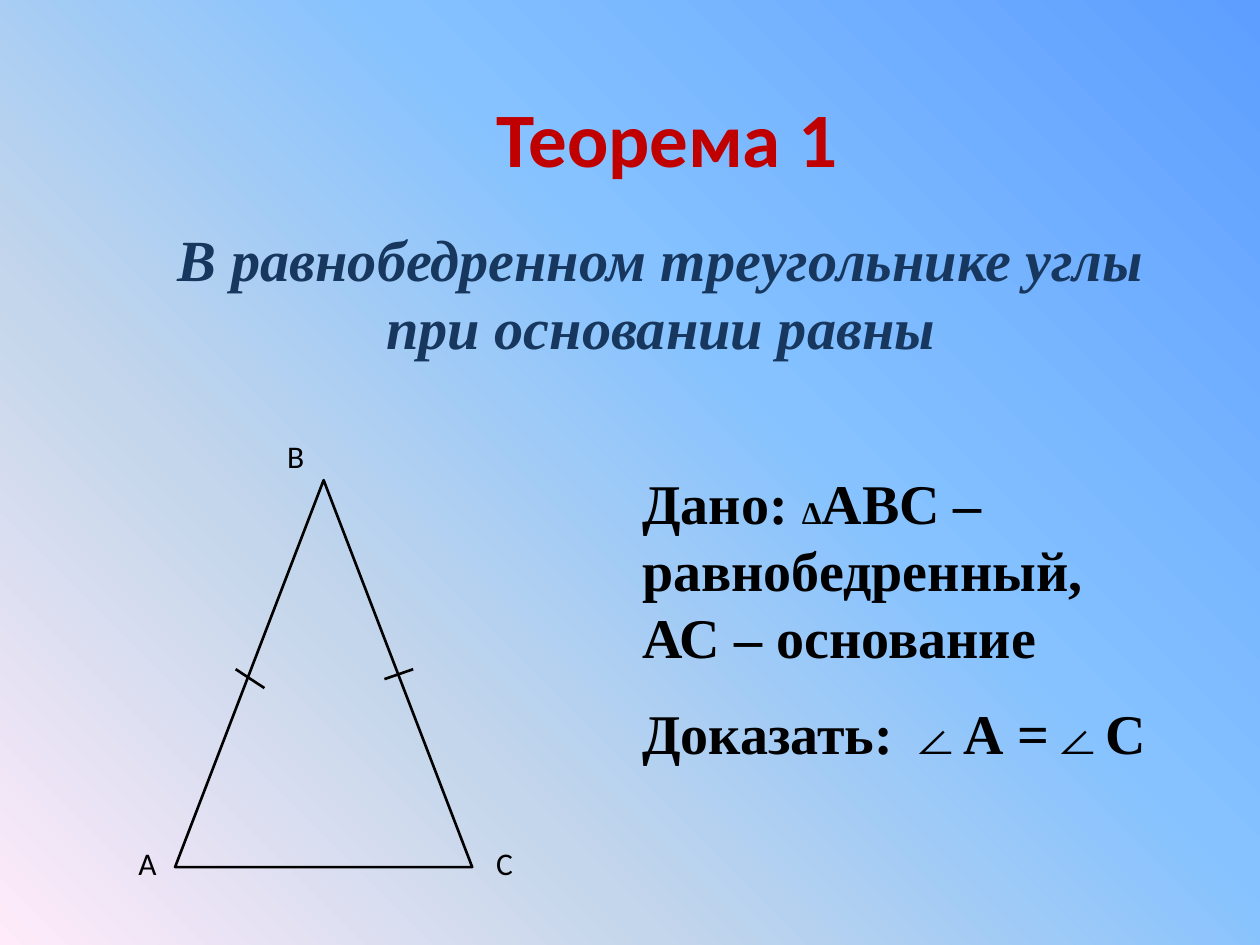
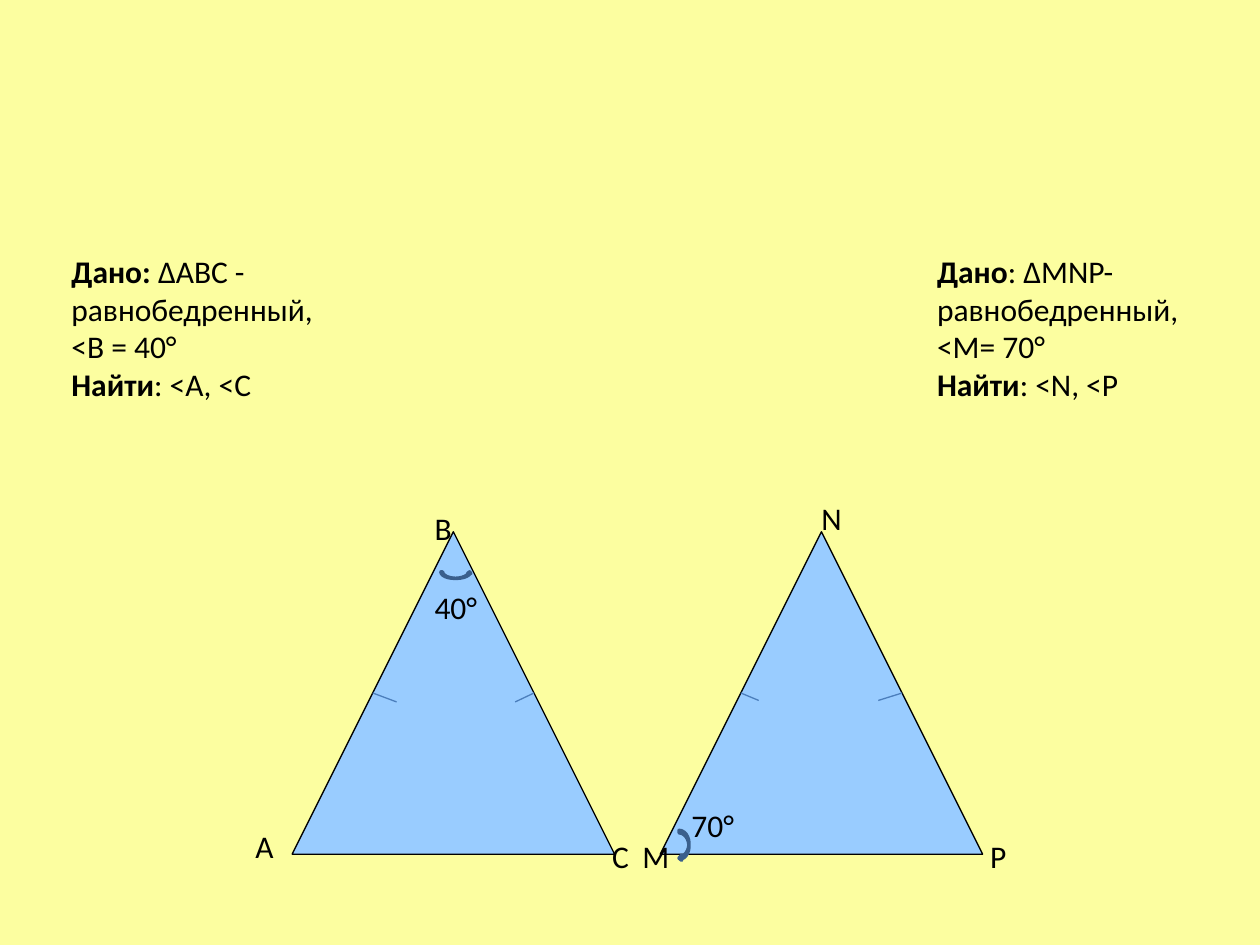
from dataclasses import dataclass

from lxml import etree
from pptx import Presentation
from pptx.dml.color import RGBColor
from pptx.enum.shapes import MSO_CONNECTOR, MSO_SHAPE
from pptx.enum.text import MSO_AUTO_SIZE, PP_ALIGN
from pptx.oxml.ns import qn
from pptx.util import Cm, Pt

TRIANGLE = MSO_SHAPE.ISOSCELES_TRIANGLE
UP_ARC = MSO_SHAPE.CURVED_UP_ARROW
LEFT_ARC = MSO_SHAPE.CURVED_LEFT_ARROW
STRAIGHT = MSO_CONNECTOR.STRAIGHT
CENTER = PP_ALIGN.CENTER
GROW = MSO_AUTO_SIZE.SHAPE_TO_FIT_TEXT
NO_FIT = MSO_AUTO_SIZE.NONE


@dataclass(frozen=True)
class Theme:
    sans: str = "Calibri"
    serif: str = "Times New Roman"
    title_size: float = 44
    theorem_size: float = 33.3
    given_size: float = 32
    label_size: float = 18
    ink: str = "000000"
    title: str = "C00000"
    theorem: str = "17375E"
    triangle: str = "99CCFF"
    tick: str = "4B7EBC"
    arc: str = "4F81BD"
    arc_edge: str = "3A5F8C"
    paper: str = "FCFEA0"
    sky: tuple = ((0, "5E9EFF"), (40, "85C2FF"), (70, "C4D6EB"), (100, "FFEBFA"))


THEME = Theme()
LABEL = {"name": THEME.sans, "size": Pt(THEME.label_size)}
LABEL_BOLD = {**LABEL, "bold": True}
TITLE = {"name": THEME.sans, "size": Pt(THEME.title_size), "bold": True}
THEOREM = {"name": THEME.serif, "size": Pt(THEME.theorem_size),
           "bold": True, "italic": True}
GIVEN = {"name": THEME.serif, "size": Pt(THEME.given_size), "bold": True}
GIVEN_SMALL = {**GIVEN, "size": Pt(THEME.label_size)}


def rgb(code):
    return RGBColor.from_string(code)


def cm(values):
    return [Cm(value) for value in values]


# Text
def add_run(paragraph, text, style, color=THEME.ink):
    run = paragraph.add_run()
    run.text = text
    for attribute, value in style.items():
        setattr(run.font, attribute, value)
    run.font.color.rgb = rgb(color)


def next_paragraph(frame, index):
    return frame.add_paragraph() if index else frame.paragraphs[0]


def add_text(shapes, box, paragraphs, wrap=True, space_before=0):
    """Each paragraph is a list of (text, style); None breaks the line."""
    frame = shapes.add_textbox(*cm(box)).text_frame
    frame.word_wrap = wrap
    frame.auto_size = GROW
    for index, runs in enumerate(paragraphs):
        paragraph = next_paragraph(frame, index)
        paragraph.space_before = Pt(space_before)
        for run in runs:
            if run is None:
                paragraph.add_line_break()
            else:
                add_run(paragraph, *run)


def add_label(shapes, text, left, top, width, height=1.02):
    add_text(shapes, (left, top, width, height), [[(text, LABEL)]], wrap=False)


def fill_placeholder(placeholder, box, lines, style, color):
    for side, value in zip(("left", "top", "width", "height"), cm(box)):
        setattr(placeholder, side, value)
    frame = placeholder.text_frame
    frame.auto_size = NO_FIT
    for index, line in enumerate(lines):
        paragraph = next_paragraph(frame, index)
        paragraph.alignment = CENTER
        add_run(paragraph, line, style, color)
    return frame


# Drawing
def add_figure(shapes, kind, box, fill, line, weight):
    figure = shapes.add_shape(kind, *cm(box))
    figure.shadow.inherit = False
    if fill:
        figure.fill.solid()
        figure.fill.fore_color.rgb = rgb(fill)
    else:
        figure.fill.background()
    figure.line.color.rgb = rgb(line)
    figure.line.width = Pt(weight)


def add_tick(shapes, ends, color, weight):
    tick = shapes.add_connector(STRAIGHT, *cm(ends))
    tick.line.color.rgb = rgb(color)
    tick.line.width = Pt(weight)
    etree.SubElement(tick._element.spPr, qn("a:effectLst"))


def set_corner_gradient(slide, stops):
    """Radial gradient spreading from the top right corner."""
    slide.background.fill.gradient()
    gradient = slide.element.xpath(".//a:gradFill")[0]
    for child in list(gradient):
        gradient.remove(child)
    stop_list = etree.SubElement(gradient, qn("a:gsLst"))
    for position, color in stops:
        stop = etree.SubElement(stop_list, qn("a:gs"), pos=str(position * 1000))
        etree.SubElement(stop, qn("a:srgbClr"), val=color)
    circle = etree.SubElement(gradient, qn("a:path"), path="circle")
    etree.SubElement(circle, qn("a:fillToRect"), l="100000", b="100000")


# Slides
def build_theorem(deck):
    slide = deck.slides.add_slide(deck.slide_layouts[1])
    set_corner_gradient(slide, THEME.sky)
    title, theorem = slide.placeholders
    fill_placeholder(title, (2.11, 1.7, 22.68, 2.11), ["Теорема 1"],
                     TITLE, THEME.title)
    statement = fill_placeholder(
        theorem, (2.34, 4.65, 21.97, 2.82),
        ["В равнобедренном треугольнике углы", "при основании равны"],
        THEOREM, THEME.theorem)
    for paragraph in statement.paragraphs:
        paragraph.line_spacing = 0.8
        etree.SubElement(paragraph._p.get_or_add_pPr(), qn("a:buNone"))

    add_text(slide.shapes, (12.7, 9.32, 12.07, 6.35), [
        [("Дано: ", GIVEN), ("Δ", GIVEN_SMALL), ("АВС – равнобедренный,", GIVEN),
         None, ("АС – основание", GIVEN)],
        [("Доказать: ∠А =∠С", GIVEN)],
    ], space_before=THEME.given_size / 2)

    # Triangle with equal sides marked
    drawing = slide.shapes.add_group_shape().shapes
    add_figure(drawing, TRIANGLE, (3.53, 9.68, 5.99, 7.8), None, THEME.ink, 1.5)
    for ends in ((4.75, 13.49, 5.33, 13.87), (7.75, 13.69, 8.33, 13.49)):
        add_tick(drawing, ends, THEME.ink, 1.5)
    for vertex, left, top in (("A", 2.54, 16.89), ("B", 5.54, 8.69),
                              ("C", 9.75, 16.89)):
        add_label(drawing, vertex, left, top, 1.09, 1.27)


def build_problems(deck):
    slide = deck.slides.add_slide(deck.slide_layouts[6])
    slide.background.fill.solid()
    slide.background.fill.fore_color.rgb = rgb(THEME.paper)
    shapes = slide.shapes

    # Triangles, with ticks running inward from the middle of each side
    top, side = 10.72, 6.5
    for left, left_tick, right_tick in ((5.89, (0.48, 0.18), (-0.38, 0.18)),
                                        (13.31, (0.36, 0.15), (-0.48, 0.15))):
        add_figure(shapes, TRIANGLE, (left, top, side, side),
                   THEME.triangle, THEME.ink, 0.75)
        for share, (dx, dy) in ((0.25, left_tick), (0.75, right_tick)):
            x, y = left + share * side, top + side / 2
            add_tick(shapes, (x, y, x + dx, y + dy), THEME.tick, 0.75)

    # Angle arcs
    for kind, box in ((UP_ARC, (8.89, 11.53, 0.61, 0.13)),
                      (LEFT_ARC, (13.69, 16.74, 0.2, 0.61))):
        add_figure(shapes, kind, box, THEME.arc, THEME.arc_edge, 2)

    # Angle values and vertices
    for label in (("40°", 8.51, 11.73, 1.4), ("70°", 13.69, 16.13, 1.37),
                  ("A", 4.9, 16.54, 0.89), ("B", 8.51, 10.13, 1.19),
                  ("C", 12.09, 16.74, 0.86), ("М", 12.7, 16.74, 1.07),
                  ("N", 16.31, 9.93, 0.94), ("P", 19.71, 16.74, 0.84)):
        add_label(shapes, *label)

    # Problem statements
    for left, width, given, triangle, angle, unknown in (
            (1.19, 5.41, "Дано:", " ∆АВС - равнобедренный,", "<B = 40°", ": <A, <С"),
            (18.64, 5.69, "Дано", ": ∆MNP- равнобедренный,", "<М= 70°", ": <N, <P")):
        add_text(shapes, (left, 4.95, width, 3.33), [
            [(given, LABEL_BOLD), (triangle, LABEL)],
            [(angle, LABEL)],
            [("Найти", LABEL_BOLD), (unknown, LABEL)],
        ])


def main():
    deck = Presentation()
    deck.slide_width, deck.slide_height = Cm(25.4), Cm(19.05)
    build_theorem(deck)
    build_problems(deck)
    deck.save("out.pptx")


if __name__ == "__main__":
    main()
